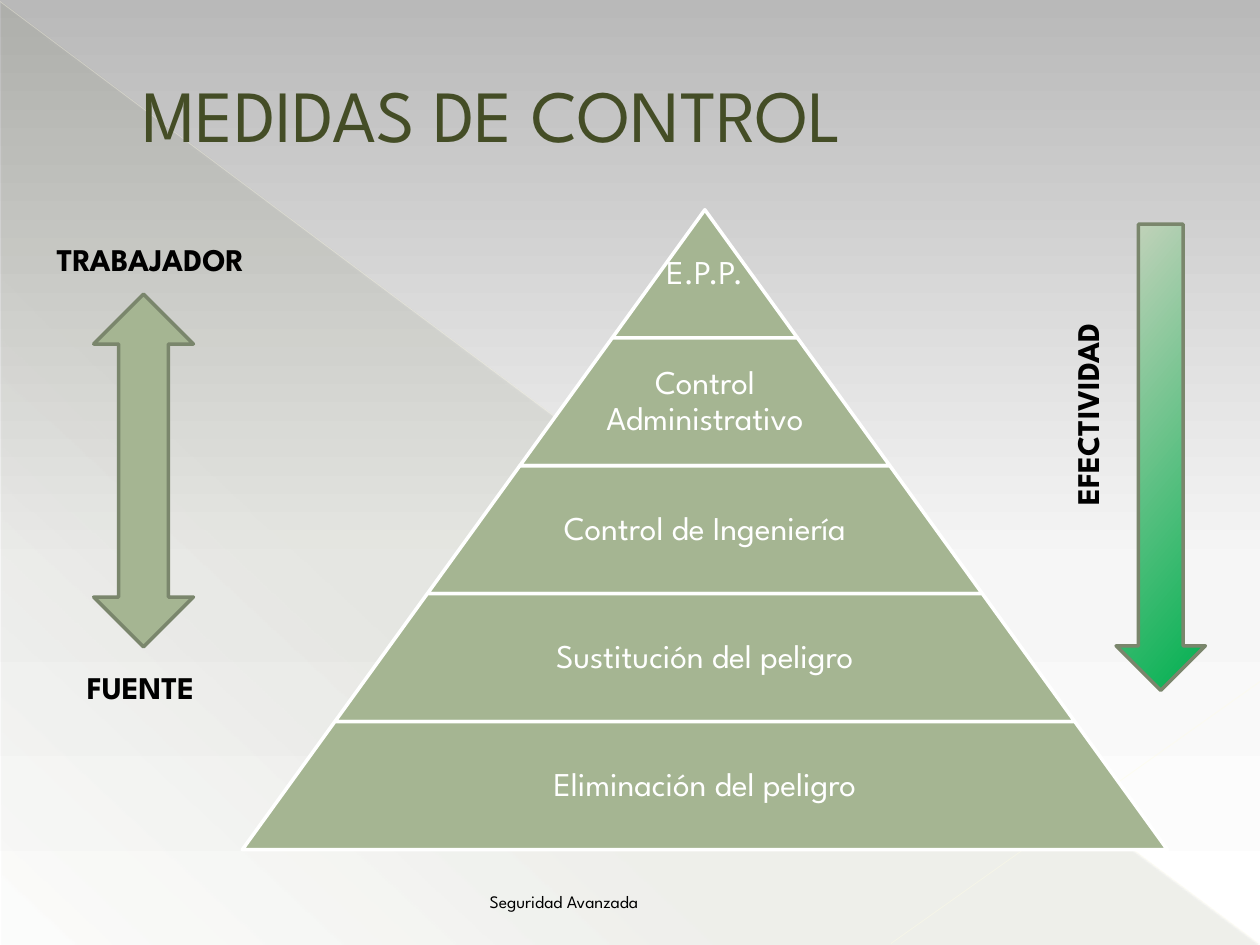
from lxml import etree
from pptx import Presentation
from pptx.dml.color import RGBColor
from pptx.enum.shapes import MSO_CONNECTOR, MSO_SHAPE
from pptx.enum.text import MSO_ANCHOR, PP_ALIGN
from pptx.oxml.ns import qn
from pptx.util import Cm, Pt

LEFT, MID, RIGHT = PP_ALIGN.LEFT, PP_ALIGN.CENTER, PP_ALIGN.RIGHT
TOP, CENTER, BASE = MSO_ANCHOR.TOP, MSO_ANCHOR.MIDDLE, MSO_ANCHOR.BOTTOM
STRAIGHT = MSO_CONNECTOR.STRAIGHT
WEDGE, TIER = MSO_SHAPE.RIGHT_TRIANGLE, MSO_SHAPE.TRAPEZOID
DOWN, BOTH = MSO_SHAPE.DOWN_ARROW, MSO_SHAPE.LEFT_RIGHT_ARROW

COLORS = {
    "gray": "B9B9B9", "pale": "F6F6F6", "white": "FFFFFF", "black": "000000",
    "olive": "444D26", "sage": "A5B592", "edge": "7A866C", "green": "00B050",
    "mist": "C9D3BE", "cream": "FFFDE3", "ivory": "FFFDE6",
}
TIERS = ["E.P.P.", "Control Administrativo", "Control de Ingeniería",
         "Sustitución del peligro", "Eliminación del peligro"]


class Deck:
    font = "League Spartan"

    def __init__(self, slide):
        self.slide = slide
        self.shapes = slide.shapes

    def color(self, name):
        return RGBColor.from_string(COLORS[name])

    def blend(self, fill, root, stops, angle):
        fill.gradient()
        fill.gradient_angle = (360 - angle) % 360
        items = root.xpath(".//a:gsLst")[0]
        for old in list(items):
            items.remove(old)
        for pos, name, alpha in stops:
            stop = etree.SubElement(items, qn("a:gs"), pos=str(pos * 1000))
            tint = etree.SubElement(stop, qn("a:srgbClr"), val=COLORS[name])
            if alpha < 100:
                etree.SubElement(tint, qn("a:alpha"), val=str(alpha * 1000))

    def backdrop(self, stops, angle):
        self.blend(self.slide.background.fill, self.slide.element, stops, angle)

    def shape(self, kind, box, fill, angle=0, edge=None, turn=0):
        item = self.shapes.add_shape(kind, *map(Cm, box))
        item.shadow.inherit = False
        item.rotation = turn
        if isinstance(fill, str):
            item.fill.solid()
            item.fill.fore_color.rgb = self.color(fill)
        else:
            self.blend(item.fill, item.element.spPr, fill, angle)
        if edge:
            item.line.color.rgb = self.color(edge)
            item.line.width = Pt(2)
        else:
            item.line.fill.background()
        return item

    def line(self, ends, name, width, alpha):
        item = self.shapes.add_connector(STRAIGHT, *map(Cm, ends))
        item.line.color.rgb = self.color(name)
        item.line.width = Pt(width)
        props = item.element.spPr
        tint = props.xpath("./a:ln//a:srgbClr")[0]
        etree.SubElement(tint, qn("a:alpha"), val=str(alpha * 1000))
        etree.SubElement(props, qn("a:effectLst"))

    def text(self, words, box, size, name="black", align=LEFT, anchor=TOP,
             bold=False, turn=0, pad=None, inset=None, lead=None):
        item = self.shapes.add_textbox(*map(Cm, box))
        item.rotation = turn
        frame = item.text_frame
        frame.word_wrap = True
        frame.vertical_anchor = anchor
        if pad is not None:
            frame.margin_left = frame.margin_right = Cm(pad)
            frame.margin_top = frame.margin_bottom = Cm(pad)
        if inset is not None:
            frame.margin_left = Cm(inset)
        frame.text = words
        para = frame.paragraphs[0]
        para.alignment = align
        if lead:
            para.line_spacing = lead
        for run in para.runs:
            run.font.name = self.font
            run.font.size = Pt(size)
            run.font.bold = bold
            run.font.color.rgb = self.color(name)

    def pyramid(self, words, axis, top, step, height):
        for row, label in enumerate(words):
            width = step * (row + 1)
            y = top + row * height
            tier = self.shape(TIER, (axis - width / 2, y, width, height),
                              "sage", edge="white")
            tier.adjustments[0] = step / 2 / height
            span = max(step, 0.65 * width)
            self.text(label, (axis - span / 2, y, span, height), 19, "white",
                      MID, CENTER, pad=0.08, lead=0.9)


def main():
    prs = Presentation()
    prs.slide_width, prs.slide_height = Cm(25.4), Cm(19.05)
    deck = Deck(prs.slides.add_slide(prs.slide_layouts[6]))

    deck.backdrop([(0, "gray", 100), (60, "pale", 100), (100, "white", 100)], 90)
    deck.shape(WEDGE, (0.03, 0.05, 25.35, 19),
               [(0, "olive", 10), (70, "olive", 8), (100, "olive", 1)], 133)
    deck.line((0, 0.03, 25.37, 19.02), "cream", 0.39, 35)
    deck.line((25.4, 13.74, 17.96, 19.02), "ivory", 0.47, 45)

    deck.pyramid(TIERS, axis=14.21, top=4.23, step=3.73, height=2.58)
    deck.text("MEDIDAS DE CONTROL", (1.27, 0.74, 22.86, 3.07), 42, "olive",
              anchor=CENTER, inset=1.6)
    deck.text("Seguridad Avanzada", (1.27, 17.68, 11.84, 0.84), 10,
              align=RIGHT, anchor=BASE)

    deck.shape(DOWN, (22.5, 4.52, 1.8, 9.4),
               [(0, "green", 100), (100, "mist", 100)], 220, "edge")
    deck.shape(BOTH, (-0.66, 8.48, 7.11, 2.01), "sage", edge="edge", turn=270)
    for words, x, y, width, turn in [
        ("TRABAJADOR", 0.89, 4.72, 4.8, 0),
        ("FUENTE", 1.5, 13.34, 3.4, 0),
        ("EFECTIVIDAD", 19.51, 7.52, 4.8, 270),
    ]:
        deck.text(words, (x, y, width, 1.02), 18, bold=True, turn=turn)
    prs.save("out.pptx")


if __name__ == "__main__":
    main()
